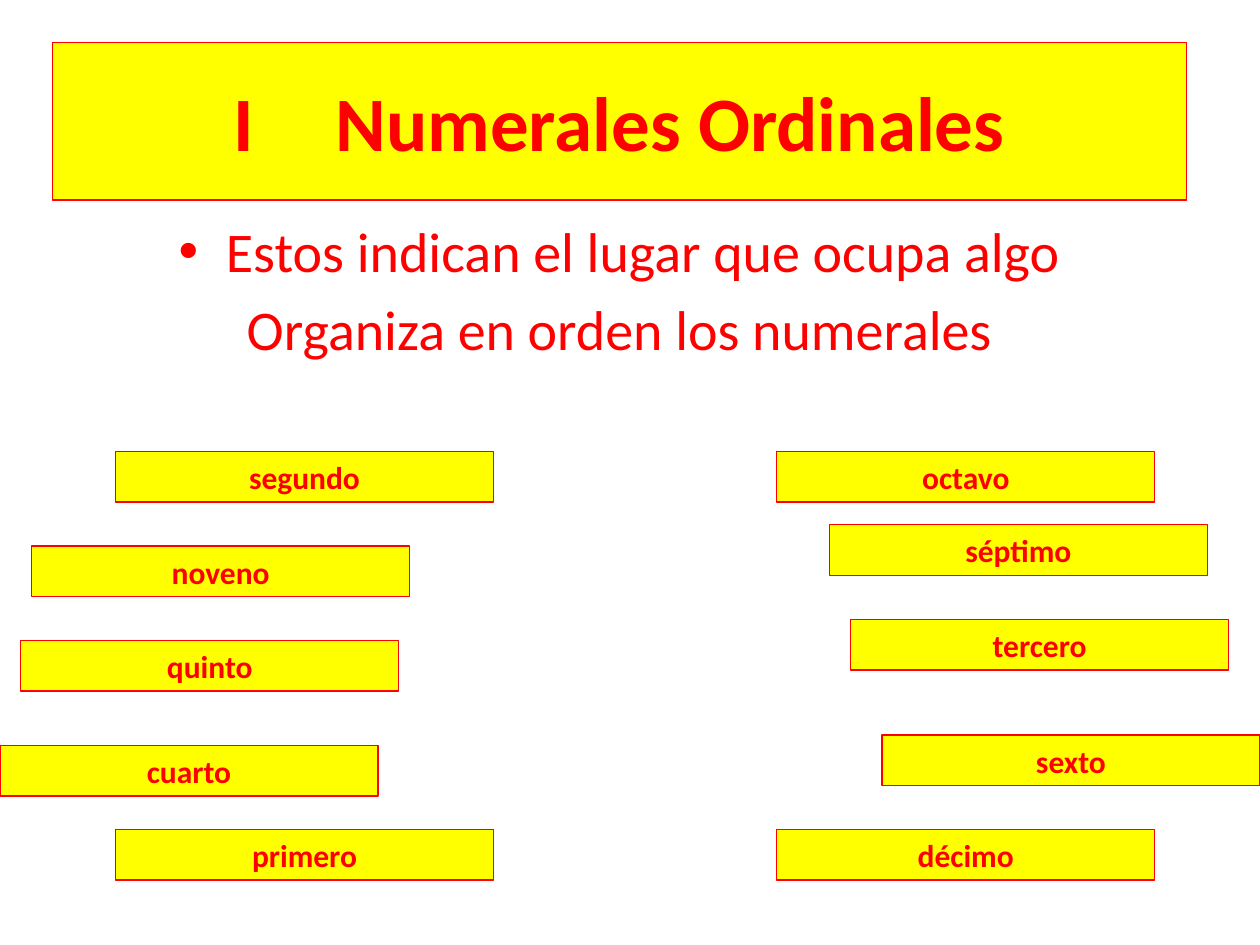
import pptx
import pptx.dml.color
import pptx.enum.shapes
import pptx.enum.text
import pptx.oxml.ns
import pptx.util
from lxml import etree
from pptx.util import Cm

COLORS = {"fill": "FFFF00", "ink": "FF0000"}
FONT = "Calibri"
CENTER = pptx.enum.text.PP_ALIGN.CENTER
MIDDLE = pptx.enum.text.MSO_ANCHOR.MIDDLE
NO_AUTOSIZE = pptx.enum.text.MSO_AUTO_SIZE.NONE

ORDINALS = [
    ("octavo", 15.66, 9.1),
    ("séptimo", 16.72, 10.58),
    ("sexto", 17.78, 14.82),
    ("quinto", 0.42, 12.91),
    ("cuarto", 0, 15.03),
    ("tercero", 17.15, 12.49),
    ("segundo", 2.33, 9.1),
    ("primero", 2.33, 16.72),
    ("décimo", 15.66, 16.72),
    ("noveno", 0.64, 11.01),
]


class OrdinalSlide:
    def __init__(self, presentation):
        self.slide = presentation.slides.add_slide(presentation.slide_layouts[1])

    def color(self, name):
        return pptx.dml.color.RGBColor.from_string(COLORS[name])

    def place(self, shape, left, top, width, height):
        shape.left, shape.top = Cm(left), Cm(top)
        shape.width, shape.height = Cm(width), Cm(height)

    def frame(self, shape):
        shape.fill.solid()
        shape.fill.fore_color.rgb = self.color("fill")
        shape.line.color.rgb = self.color("ink")
        shape.line.width = pptx.util.Pt(0.75)

    def format_text(self, paragraph, size, bold):
        paragraph.alignment = CENTER
        for run in paragraph.runs:
            run.font.name = FONT
            run.font.size = pptx.util.Pt(size)
            run.font.bold = bold
            run.font.color.rgb = self.color("ink")

    def title(self, text):
        shape = self.slide.shapes.title
        self.place(shape, 1.06, 0.85, 22.86, 3.18)
        self.frame(shape)
        text_frame = shape.text_frame
        text_frame.text = text
        text_frame.auto_size = NO_AUTOSIZE
        text_frame.vertical_anchor = MIDDLE
        paragraph = text_frame.paragraphs[0]
        properties = paragraph._p.get_or_add_pPr()
        properties.set("marL", str(Cm(2.06)))
        properties.set("indent", str(Cm(-2.06)))
        self.format_text(paragraph, 44, True)

    def body(self, bulleted, plain):
        shape = self.slide.placeholders[1]
        self.place(shape, 1.06, 4.23, 22.86, 4.66)
        text_frame = shape.text_frame
        text_frame.text = f"{bulleted}\n{plain}"
        text_frame.auto_size = NO_AUTOSIZE
        first, second = text_frame.paragraphs
        first.space_before = pptx.util.Pt(0)
        etree.SubElement(second._p.get_or_add_pPr(), pptx.oxml.ns.qn("a:buNone"))
        for paragraph in text_frame.paragraphs:
            self.format_text(paragraph, 32, False)

    def ordinal(self, text, left, top):
        shape = self.slide.shapes.add_shape(
            pptx.enum.shapes.MSO_SHAPE.RECTANGLE, Cm(left), Cm(top), Cm(7.62), Cm(1.02))
        shape.shadow.inherit = False
        self.frame(shape)
        shape.text_frame.text = text
        shape.text_frame.vertical_anchor = MIDDLE
        self.format_text(shape.text_frame.paragraphs[0], 18, True)


def main():
    presentation = pptx.Presentation()
    presentation.slide_width = Cm(25.4)
    presentation.slide_height = Cm(19.05)
    page = OrdinalSlide(presentation)
    page.title("I\tNumerales Ordinales")
    page.body("Estos indican el lugar que ocupa algo", "Organiza en orden los numerales")
    for text, left, top in ORDINALS:
        page.ordinal(text, left, top)
    presentation.save("out.pptx")


if __name__ == "__main__":
    main()
